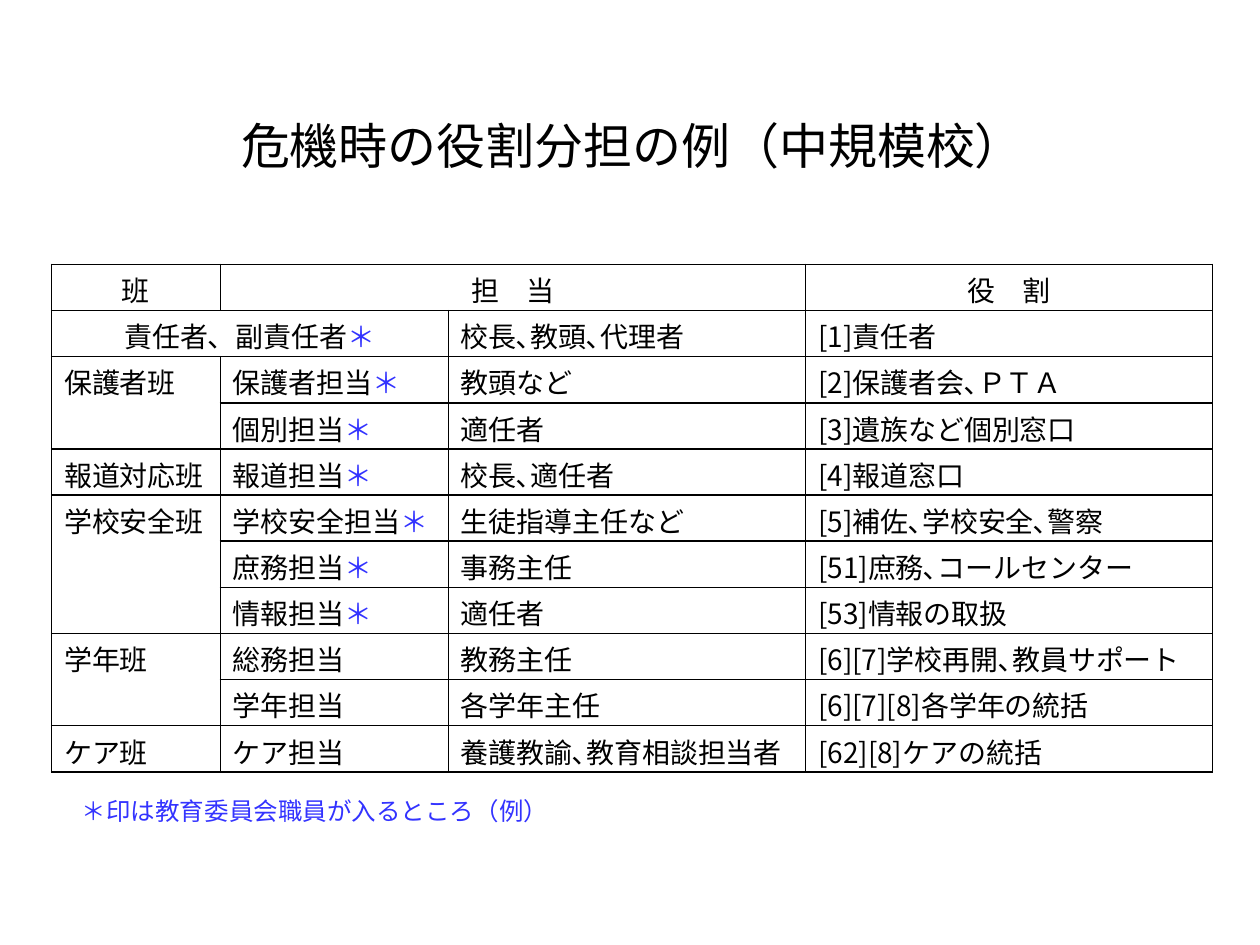
from dataclasses import dataclass

from lxml.etree import SubElement
from pptx import Presentation
from pptx.dml.color import RGBColor
from pptx.enum.text import MSO_ANCHOR as Anchor, MSO_AUTO_SIZE as AutoSize, PP_ALIGN as Align
from pptx.oxml.ns import qn
from pptx.util import Cm, Pt


@dataclass(frozen=True)
class Theme:
    font: str = "Noto Sans CJK JP"
    note_font: str = "Arial"
    ink: RGBColor = RGBColor(0x00, 0x00, 0x00)
    accent: RGBColor = RGBColor(0x33, 0x33, 0xFF)
    paper: RGBColor = RGBColor(0xFF, 0xFF, 0xFF)
    title_size: int = 28
    table_size: int = 16
    note_size: int = 14
    border: int = 1


@dataclass(frozen=True)
class Duty:
    group: str  # empty when the group of the row above continues
    post: str
    person: str
    role: str


THEME = Theme()
MARK = "＊"
COLUMN_WIDTHS = (3.4, 4.6, 7.2, 8.2)
ROW_HEIGHT = 0.93
DUTIES = (
    Duty("保護者班", "保護者担当＊", "教頭など", "[2]保護者会､ＰＴＡ"),
    Duty("", "個別担当＊", "適任者", "[3]遺族など個別窓口"),
    Duty("報道対応班", "報道担当＊", "校長､適任者", "[4]報道窓口"),
    Duty("学校安全班", "学校安全担当＊", "生徒指導主任など", "[5]補佐､学校安全､警察"),
    Duty("", "庶務担当＊", "事務主任", "[51]庶務､コールセンター"),
    Duty("", "情報担当＊", "適任者", "[53]情報の取扱"),
    Duty("学年班", "総務担当", "教務主任", "[6][7]学校再開､教員サポート"),
    Duty("", "学年担当", "各学年主任", "[6][7][8]各学年の統括"),
    Duty("ケア班", "ケア担当", "養護教諭､教育相談担当者", "[62][8]ケアの統括"),
)


def add_text(paragraph, text: str, *, size: int, color: RGBColor = THEME.ink,
             font: str = THEME.font, align: Align = Align.LEFT) -> None:
    paragraph.alignment = align
    run = paragraph.add_run()
    run.text = text
    run.font.size = Pt(size)
    run.font.color.rgb = color
    run.font.name = font
    east_asian = SubElement(run.font._element, qn("a:ea"))
    east_asian.set("typeface", THEME.font)


def set_borders(cell) -> None:
    properties = cell._tc.get_or_add_tcPr()
    for position, side in enumerate(("lnL", "lnR", "lnT", "lnB")):
        line = SubElement(properties, qn(f"a:{side}"), w=str(Pt(THEME.border)))
        properties.insert(position, line)
        fill = SubElement(line, qn("a:solidFill"))
        SubElement(fill, qn("a:srgbClr"), val=str(THEME.ink))


def fill_cell(cell, text: str, align: Align = Align.LEFT) -> None:
    """Write the cell text, with a closing mark in the accent colour."""
    paragraph = cell.text_frame.paragraphs[0]
    add_text(paragraph, text.removesuffix(MARK), size=THEME.table_size, align=align)
    if text.endswith(MARK):
        add_text(paragraph, MARK, size=THEME.table_size, color=THEME.accent, align=align)


def add_duty_table(slide) -> None:
    row_count = len(DUTIES) + 2
    frame = slide.shapes.add_table(row_count, len(COLUMN_WIDTHS), Cm(1.04), Cm(5.33),
                                   Cm(sum(COLUMN_WIDTHS)), Cm(ROW_HEIGHT * row_count))
    table = frame.table
    table.first_row = table.horz_banding = False
    for column, width in zip(table.columns, COLUMN_WIDTHS):
        column.width = Cm(width)
    for row in table.rows:
        row.height = Cm(ROW_HEIGHT)
    for cell in table.iter_cells():
        cell.margin_top, cell.margin_bottom = Cm(0.1), Cm(0)
        cell.fill.solid()
        cell.fill.fore_color.rgb = THEME.paper
        set_borders(cell)

    table.cell(0, 1).merge(table.cell(0, 2))
    for column, heading in ((0, "班"), (1, "担　当"), (3, "役　割")):
        fill_cell(table.cell(0, column), heading, Align.CENTER)
    table.cell(1, 0).merge(table.cell(1, 1))
    fill_cell(table.cell(1, 0), "責任者、副責任者＊", Align.CENTER)
    fill_cell(table.cell(1, 2), "校長､教頭､代理者")
    fill_cell(table.cell(1, 3), "[1]責任者")

    starts = [row for row, duty in enumerate(DUTIES, 2) if duty.group]
    for start, following in zip(starts, starts[1:] + [row_count]):
        if following - start > 1:
            table.cell(start, 0).merge(table.cell(following - 1, 0))
    for row, duty in enumerate(DUTIES, 2):
        for column, text in enumerate((duty.group, duty.post, duty.person, duty.role)):
            if text:
                fill_cell(table.cell(row, column), text)


def add_title(slide) -> None:
    title = slide.shapes.title
    title.left, title.top, title.width, title.height = Cm(3.35), Cm(2.13), Cm(18.8), Cm(1.6)
    title.text_frame.auto_size = AutoSize.NONE
    title.text_frame.vertical_anchor = Anchor.MIDDLE
    add_text(title.text_frame.paragraphs[0], "危機時の役割分担の例（中規模校）",
             size=THEME.title_size, align=Align.CENTER)


def add_note(slide) -> None:
    note = slide.shapes.add_textbox(Cm(1.4), Cm(15.93), Cm(13.4), Cm(0.84))
    note.text_frame.word_wrap = True
    note.text_frame.auto_size = AutoSize.SHAPE_TO_FIT_TEXT
    add_text(note.text_frame.paragraphs[0], "＊印は教育委員会職員が入るところ（例）",
             size=THEME.note_size, color=THEME.accent, font=THEME.note_font)


def main() -> None:
    presentation = Presentation()
    presentation.slide_width, presentation.slide_height = Cm(25.4), Cm(19.05)
    slide = presentation.slides.add_slide(presentation.slide_layouts[5])
    add_title(slide)
    add_duty_table(slide)
    add_note(slide)
    presentation.save("out.pptx")


if __name__ == "__main__":
    main()
